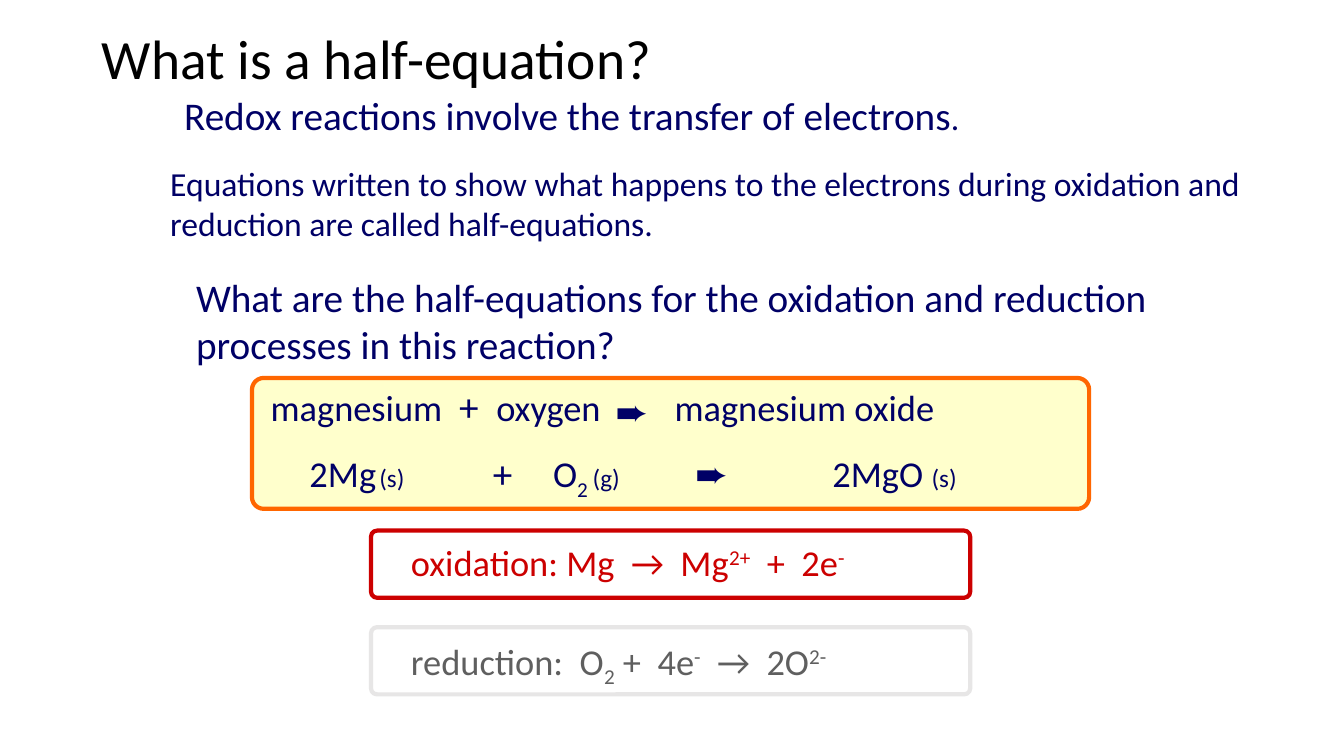
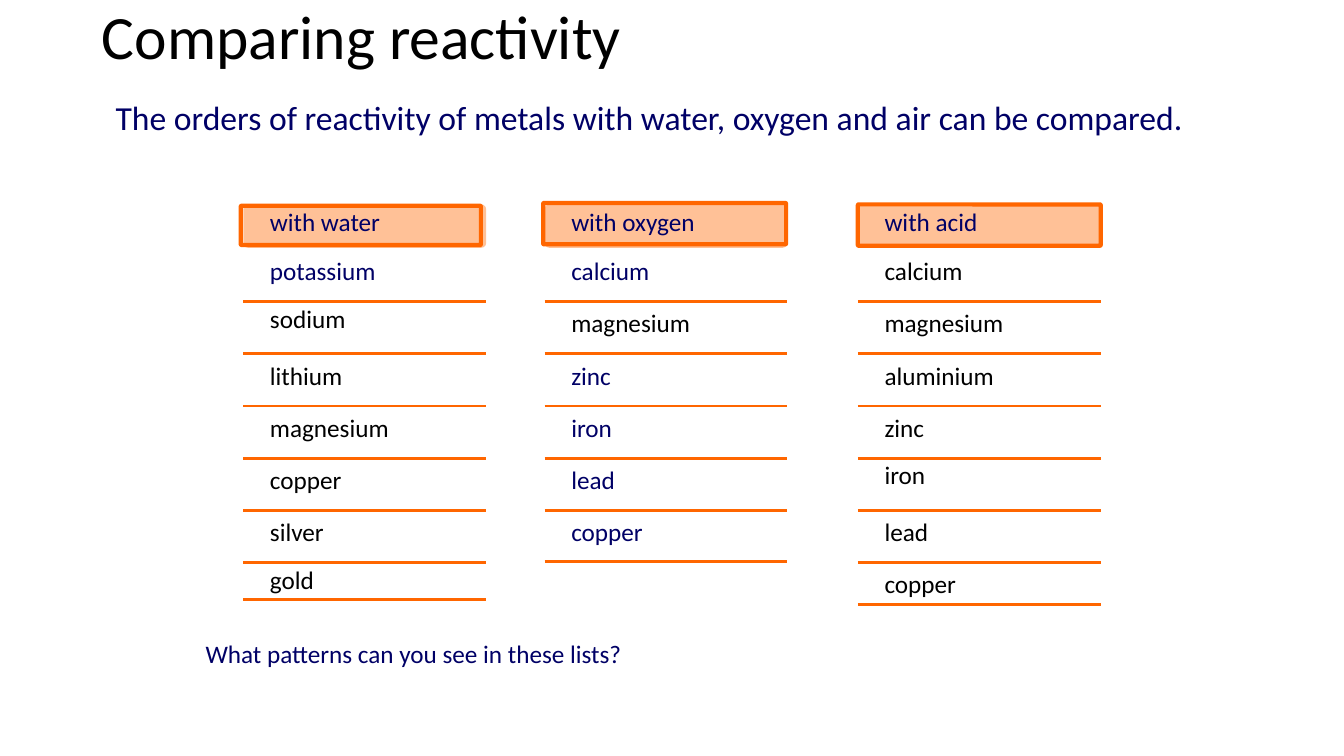
import pptx
import pptx.dml.color
import pptx.enum.shapes
import pptx.enum.text
import pptx.util
from lxml import etree

Pt = pptx.util.Pt
RGBColor = pptx.dml.color.RGBColor
SHAPES = pptx.enum.shapes.MSO_SHAPE

FONT = "Calibri"
BLACK = RGBColor(0x00, 0x00, 0x00)
NAVY = RGBColor(0x00, 0x00, 0x66)
ORANGE = RGBColor(0xFF, 0x66, 0x00)
PEACH = RGBColor(0xFF, 0xC1, 0x97)
CREAM = RGBColor(0xFF, 0xFF, 0xCC)
RED = RGBColor(0xCC, 0x00, 0x00)
GREY = RGBColor(0x5F, 0x5F, 0x5F)
PALE_GREY = RGBColor(0xE7, 0xE6, 0xE6)

SUPER, SUB = 30, -25  # baseline shift in percent


def add_span(para, text, size=18, color=NAVY, shift=0):
    """Append formatted text to a paragraph."""
    span = para.add_run()
    span.text = text
    span.font.name = FONT
    span.font.size = Pt(size)
    span.font.color.rgb = color
    if shift:
        span._r.get_or_add_rPr().set("baseline", str(shift * 1000))


class Deck:
    """House style and the page being drawn."""

    def __init__(self):
        self.file = pptx.Presentation()
        self.file.slide_width = Pt(960)
        self.file.slide_height = Pt(540)
        self.page = None

    def add_page(self, title, top, size):
        self.page = self.file.slides.add_slide(self.file.slide_layouts[6])
        box = self.text(65.75, top, 828, 56, title, size=size, color=BLACK, spacing=0.9)
        box.text_frame.vertical_anchor = pptx.enum.text.MSO_ANCHOR.MIDDLE

    def text(self, left, top, width, height, content, spacing=None, fill=None,
             **style):
        """Content is a string, or a list of (text, format changes)."""
        box = self.page.shapes.add_textbox(Pt(left), Pt(top), Pt(width), Pt(height))
        box.text_frame.word_wrap = True
        if fill is not None:
            box.fill.solid()
            box.fill.fore_color.rgb = fill
        para = box.text_frame.paragraphs[0]
        if spacing:
            para.line_spacing = spacing
        parts = [(content, {})] if isinstance(content, str) else content
        for text, changes in parts:
            add_span(para, text, **{**style, **changes})
        return box

    def panel(self, left, top, width, height, radius, fill=None, line=None):
        panel = self.page.shapes.add_shape(
            SHAPES.ROUNDED_RECTANGLE, Pt(left), Pt(top), Pt(width), Pt(height))
        panel.shadow.inherit = False
        panel.adjustments[0] = radius
        if fill is None:
            panel.fill.background()
        else:
            panel.fill.solid()
            panel.fill.fore_color.rgb = fill
        if line is None:
            panel.line.fill.background()
        else:
            panel.line.color.rgb = line
            panel.line.width = Pt(3)

    def rule(self, left, top, width):
        rule = self.page.shapes.add_connector(
            pptx.enum.shapes.MSO_CONNECTOR.STRAIGHT,
            Pt(left), Pt(top), Pt(left + width), Pt(top))
        rule.line.color.rgb = ORANGE
        rule.line.width = Pt(2)
        etree.SubElement(rule._element.spPr, pptx.oxml.ns.qn("a:effectLst"))

    def column(self, left, frame, heading, metals, navy, tight, end):
        """Headed list of metals with a rule under each one."""
        first, pitch, width = 179, 37.25, 173.5
        text_left = left + 12
        self.panel(left, 146, width, 31, 0.11, fill=PEACH)
        self.text(text_left, 144, 150, 29, heading)
        self.panel(*frame, 0.02, line=ORANGE)
        for row, metal in enumerate(metals):
            top = first + row * pitch
            self.text(text_left, top, 150, 29, metal,
                      color=NAVY if metal in navy else BLACK,
                      spacing=0.85 if metal in tight else None)
            last = row == len(metals) - 1
            self.rule(left, end if last else top + 36.5, width)


def half_equations(deck):
    deck.add_page("What is a half-equation?", top=16, size=39.6)

    # Introduction and question
    deck.text(124.5, 62, 760, 41, [
        ("Redox reactions involve the transfer of electrons", {}),
        (".", {"size": 24})], size=28)
    deck.text(114.5, 112.75, 783, 66,
              "Equations written to show what happens to the electrons during "
              "oxidation and reduction are called half-equations.", size=24)
    deck.text(133, 191.5, 752, 75,
              "What are the half-equations for the oxidation and reduction "
              "processes in this reaction?", size=28)

    # Word equation and symbol equation
    deck.panel(180, 270, 598, 93.5, 0.09, fill=CREAM, line=ORANGE)
    state = {"size": 18}
    deck.text(186.25, 276, 270, 34, [
        ("magnesium  ", {}), ("+  ", {"size": 28}), ("oxygen", {})],
        size=26, spacing=0.8)
    deck.text(474.75, 277.75, 250, 34, "magnesium oxide", size=26, spacing=0.8)
    symbols = [
        (214, 103, [("2Mg", {}), (" ", {"size": 10}), ("(s)", state)]),
        (388, 92, [("O", {}), ("2 ", {"shift": SUB}), ("(g)", state)]),
        (587.5, 144, [("2MgO ", {}), ("(s)", state)]),
    ]
    for left, width, formula in symbols:
        deck.text(left, 319, width, 38, formula, size=26)
    signs = [(432.5, 273, 45, "➨"), (345, 317.5, 33, "+"), (489.5, 317.5, 45, "➨")]
    for left, top, width, sign in signs:
        deck.text(left, top, width, 41, sign, size=28, fill=CREAM)

    # Half-equations
    halves = [
        (379, 382.5, RED, RED, [
            ("oxidation: Mg  →  Mg", {}), ("2+", {"shift": SUPER}),
            ("  +  2e", {}), ("-", {"shift": SUPER})]),
        (448, 453, PALE_GREY, GREY, [
            ("reduction:  O", {}), ("2", {"shift": SUB}),
            (" +  4e", {}), ("-", {"shift": SUPER}),
            ("  →  2O", {}), ("2-", {"shift": SUPER})]),
    ]
    for panel_top, text_top, line, color, equation in halves:
        deck.text(286.5, text_top, 382, 38, equation, size=26, color=color)
        deck.panel(265, panel_top, 428, 48, 0.09, line=line)


def reactivity(deck):
    deck.add_page("Comparing reactivity", top=0, size=44)
    deck.text(75.5, 65.5, 792, 36,
              "The orders of reactivity of metals with water, oxygen and air "
              "can be compared.", size=24)

    # Lists of metals
    deck.column(173.75, (172, 147, 171.5, 28), "with water",
                ["potassium", "sodium", "lithium", "magnesium", "copper",
                 "silver", "gold"],
                navy=["potassium"], tight=["sodium", "gold"], end=428.5)
    deck.column(389, (388, 145, 173.5, 29.5), "with oxygen",
                ["calcium", "magnesium", "zinc", "iron", "lead", "copper"],
                navy=["calcium", "zinc", "iron", "lead", "copper"],
                tight=[], end=401)
    deck.column(612.75, (612.75, 146, 173.5, 29.5), "with acid",
                ["calcium", "magnesium", "aluminium", "zinc", "iron", "lead",
                 "copper"],
                navy=[], tight=["iron"], end=432)

    # Closing question
    deck.text(139.75, 452.5, 462, 29, "What patterns can you see in these lists?")


def main():
    deck = Deck()
    half_equations(deck)
    reactivity(deck)
    deck.file.save("out.pptx")


if __name__ == "__main__":
    main()
